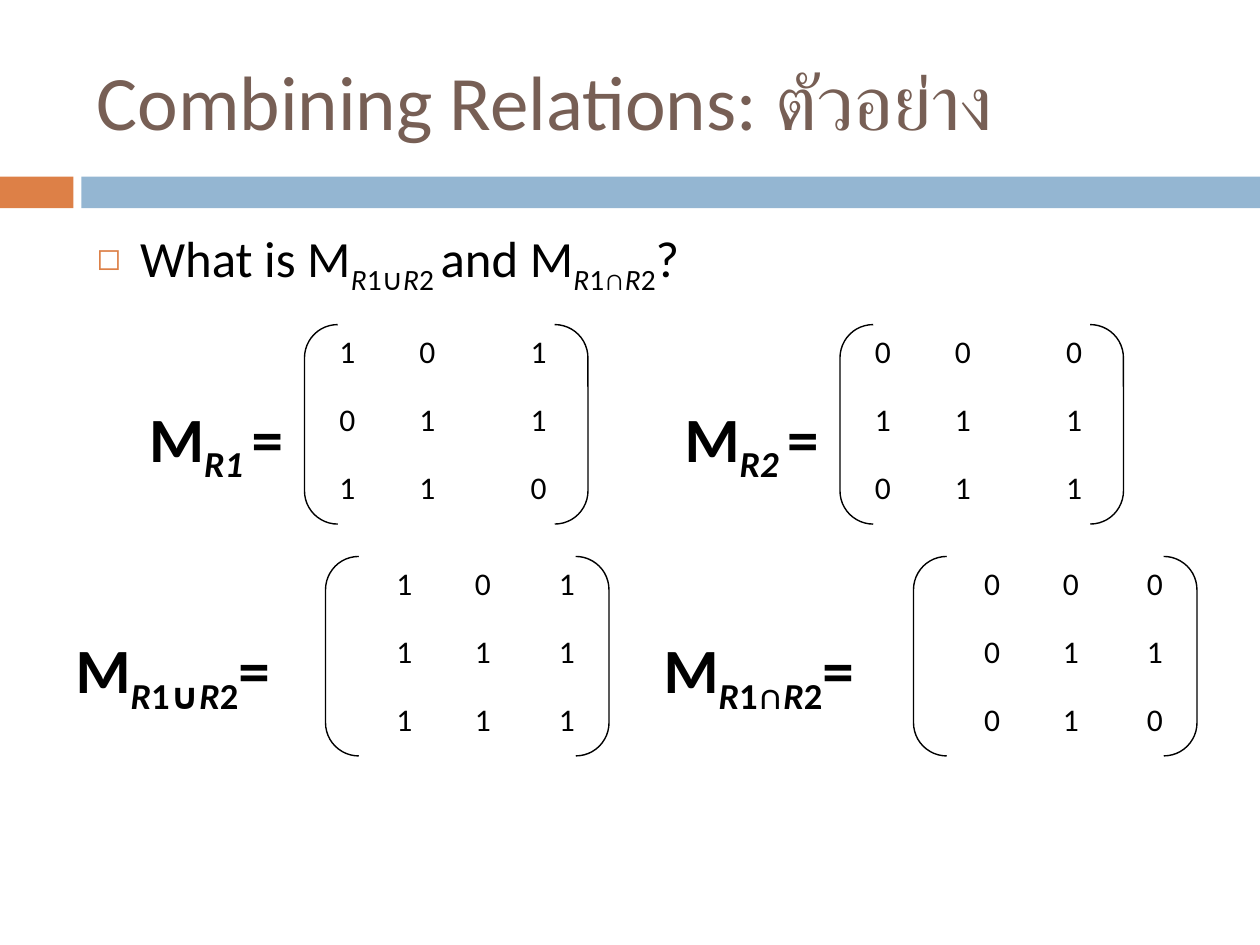
from pptx import Presentation
from pptx.dml.color import RGBColor
from pptx.enum.shapes import MSO_SHAPE as Shape
from pptx.enum.text import MSO_ANCHOR as Anchor, PP_ALIGN as Align
from pptx.oxml import parse_xml
from pptx.oxml.ns import nsdecls
from pptx.util import Pt

FONT = "Calibri"
BLACK = RGBColor(0x00, 0x00, 0x00)
BROWN = RGBColor(0x77, 0x5F, 0x55)
ORANGE = RGBColor(0xDD, 0x80, 0x47)
BLUE = RGBColor(0x94, 0xB6, 0xD2)

# Run styles: (italic, subscript)
PLAIN, SUB, SUB_ITALIC = (False, False), (False, True), (True, True)

ROW_HEIGHTS = (39, 39, 29)
BRACKET_WIDTH, BRACKET_HEIGHT = 162, 114
UPPER_COLUMNS = (98, 45, 46.5, 80.5)
LOWER_COLUMNS = (174, 42, 48, 48)


def combined_index(operator):
    """Subscript runs that name two combined relations."""
    return [("R", SUB_ITALIC), ("1" + operator, SUB),
            ("R", SUB_ITALIC), ("2", SUB)]


# Left, top, bracket left, column widths, label runs, rows of values
MATRICES = [
    (78, 187, 174, UPPER_COLUMNS,
     [("M", PLAIN), ("R1 ", SUB_ITALIC), ("=", PLAIN)], ("101", "011", "110")),
    (384, 187, 480, UPPER_COLUMNS,
     [("M", PLAIN), ("R2 ", SUB_ITALIC), ("=", PLAIN)], ("000", "111", "011")),
    (36, 319.5, 186, LOWER_COLUMNS,
     [("M", PLAIN), *combined_index("∪"), ("=", PLAIN)], ("101", "111", "111")),
    (372, 319.5, 522, LOWER_COLUMNS,
     [("M", PLAIN), *combined_index("∩"), ("=", PLAIN)], ("000", "011", "010")),
]


def style_paragraph(paragraph, size, color=BLACK, bold=False, align=Align.LEFT):
    font = paragraph.font
    font.name, font.size, font.bold = FONT, Pt(size), bold
    font.color.rgb = color
    paragraph.alignment = align


def add_runs(paragraph, runs):
    for text, (italic, subscript) in runs:
        run = paragraph.add_run()
        run.text = text
        run.font.italic = italic
        if subscript:
            run.font._element.set("baseline", "-25000")


def add_bar(slide, left, width, color):
    bar = slide.shapes.add_shape(Shape.RECTANGLE, Pt(left), Pt(101), Pt(width), Pt(18))
    bar.shadow.inherit = False
    bar.fill.solid()
    bar.fill.fore_color.rgb = color
    bar.line.fill.background()


def format_title(slide, text):
    title = slide.shapes.title
    title.left, title.top, title.width, title.height = Pt(48), Pt(18), Pt(642), Pt(78)
    title.text_frame.text = text
    title.text_frame.vertical_anchor = Anchor.MIDDLE
    style_paragraph(title.text_frame.paragraphs[0], 44, BROWN)


def add_question(slide, runs):
    box = slide.shapes.add_textbox(Pt(48), Pt(126), Pt(642), Pt(354))
    box.text_frame.word_wrap = True
    paragraph = box.text_frame.paragraphs[0]
    style_paragraph(paragraph, 29)
    paragraph.space_before = Pt(7)
    add_runs(paragraph, runs)
    # Hollow square bullet with a hanging indent, placed before the default font
    properties = paragraph._p.get_or_add_pPr()
    properties.set("marL", str(Pt(25)))
    properties.set("indent", str(-Pt(25)))
    default_font = properties.find("{*}defRPr")
    for tag in (f'<a:buClr {nsdecls("a")}><a:srgbClr val="{ORANGE}"/></a:buClr>',
                f'<a:buSzPct {nsdecls("a")} val="60000"/>',
                f'<a:buChar {nsdecls("a")} char="◻"/>'):
        default_font.addprevious(parse_xml(tag))


def add_matrix(slide, left, top, bracket_left, column_widths, label, rows):
    # Table: label merged down the first column, values beside it
    frame = slide.shapes.add_table(len(rows), len(column_widths), Pt(left), Pt(top),
                                   Pt(sum(column_widths)), Pt(sum(ROW_HEIGHTS)))
    table = frame.table
    for column, width in zip(table.columns, column_widths):
        column.width = Pt(width)
    for row, height in zip(table.rows, ROW_HEIGHTS):
        row.height = Pt(height)
    for cell in table.iter_cells():
        cell.fill.background()

    label_cell = table.cell(0, 0)
    label_cell.merge(table.cell(len(rows) - 1, 0))
    label_cell.vertical_anchor = Anchor.MIDDLE
    paragraph = label_cell.text_frame.paragraphs[0]
    style_paragraph(paragraph, 36, bold=True)
    add_runs(paragraph, label)

    for row_index, values in enumerate(rows):
        for column_index, value in enumerate(values, start=1):
            cell = table.cell(row_index, column_index)
            cell.text = value
            style_paragraph(cell.text_frame.paragraphs[0], 18, align=Align.CENTER)

    # Brackets around the values
    bracket = slide.shapes.add_shape(Shape.DOUBLE_BRACKET, Pt(bracket_left), Pt(top - 1.5),
                                     Pt(BRACKET_WIDTH), Pt(BRACKET_HEIGHT))
    bracket.shadow.inherit = False
    bracket.fill.background()
    bracket.line.color.rgb = BLACK
    bracket.line.width = Pt(0.79)


def main():
    presentation = Presentation()
    presentation.slide_width, presentation.slide_height = Pt(720), Pt(540)
    slide = presentation.slides.add_slide(presentation.slide_layouts[5])

    # Heading
    add_bar(slide, 0, 42, ORANGE)
    add_bar(slide, 46.5, 673.5, BLUE)
    format_title(slide, "Combining Relations: ตัวอย่าง")

    # Question
    add_question(slide, [("What is M", PLAIN), *combined_index("∪"), (" ", SUB),
                         ("and M", PLAIN), *combined_index("∩"), ("?", PLAIN)])

    # Matrices
    for matrix in MATRICES:
        add_matrix(slide, *matrix)

    presentation.save("out.pptx")


if __name__ == "__main__":
    main()
